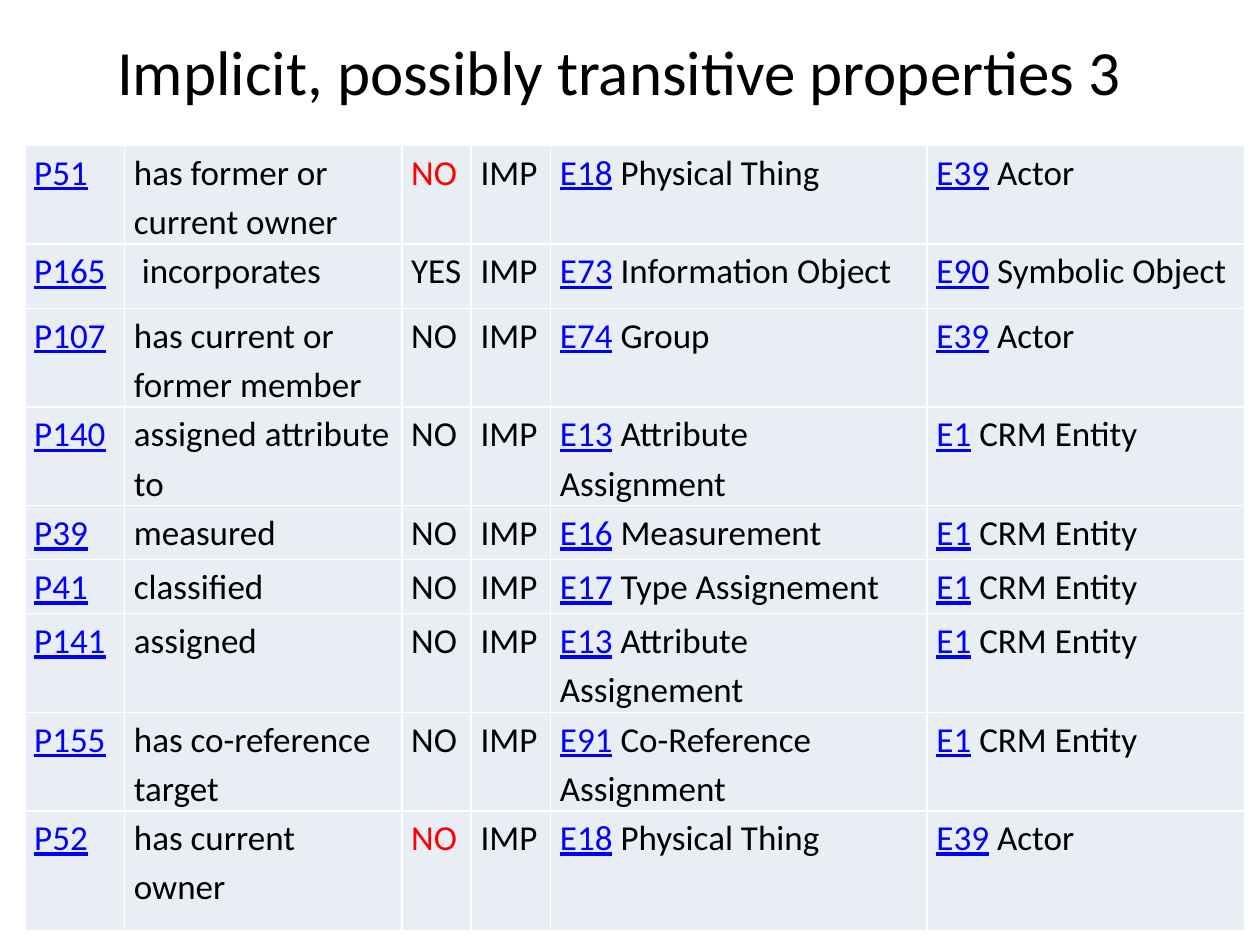
from lxml.etree import SubElement
from pptx import Presentation
from pptx.dml.color import RGBColor
from pptx.enum.text import MSO_AUTO_SIZE, PP_ALIGN
from pptx.oxml.ns import qn
from pptx.util import Cm, Pt

COLORS = {"text": "000000", "link": "0000FF", "alert": "FF0000",
          "cell": "E9EDF4", "border": "FFFFFF"}
COL_WIDTHS = [2.01, 5.59, 1.4, 1.6, 7.59, 6.4]
ROW_HEIGHTS = [1.3, 1.3, 1.24, 1.19, 1.09, 1.09, 1.78, 1.3, 2.41]
PROPERTIES = [
    ("P51", "has former or current owner", "NO", "E18 Physical Thing", "E39 Actor"),
    ("P165", " incorporates", "YES", "E73 Information Object", "E90 Symbolic Object"),
    ("P107", "has current or former member", "NO", "E74 Group", "E39 Actor"),
    ("P140", "assigned attribute to", "NO", "E13 Attribute Assignment", "E1 CRM Entity"),
    ("P39", "measured", "NO", "E16 Measurement", "E1 CRM Entity"),
    ("P41", "classified", "NO", "E17 Type Assignement", "E1 CRM Entity"),
    ("P141", "assigned", "NO", "E13 Attribute Assignement", "E1 CRM Entity"),
    ("P155", "has co-reference target", "NO", "E91 Co-Reference Assignment", "E1 CRM Entity"),
    ("P52", "has current owner", "NO", "E18 Physical Thing", "E39 Actor"),
]
ALERTS = {"P51", "P52"}


def add_text(p, text, size=20, color="text", underline=False):
    """Append a formatted run to a paragraph."""
    r = p.add_run()
    r.text = text
    r.font.name = "Calibri"
    r.font.size = Pt(size)
    r.font.underline = underline
    r.font.color.rgb = RGBColor.from_string(COLORS[color])


def add_class(p, label):
    """Write a class label with its code styled as a link."""
    code, name = label.split(" ", 1)
    add_text(p, code, color="link", underline=True)
    add_text(p, " " + name)


def style_cell(cell):
    """Set margins, borders, fill and line spacing, and return the paragraph."""
    cell.margin_left = cell.margin_right = Cm(0.19)
    cell.margin_top = cell.margin_bottom = 0
    tcPr = cell._tc.get_or_add_tcPr()
    for side in ("a:lnL", "a:lnR", "a:lnT", "a:lnB"):
        ln = SubElement(tcPr, qn(side), w=str(Pt(1)))
        fill = SubElement(ln, qn("a:solidFill"))
        SubElement(fill, qn("a:srgbClr"), val=COLORS["border"])
    cell.fill.solid()
    cell.fill.fore_color.rgb = RGBColor.from_string(COLORS["cell"])
    p = cell.text_frame.paragraphs[0]
    p.line_spacing = 1.15
    return p


def add_title(s, text, left, top, width, height):
    """Place the slide title."""
    tf = s.shapes.add_textbox(Cm(left), Cm(top), Cm(width), Cm(height)).text_frame
    tf.word_wrap = False
    tf.auto_size = MSO_AUTO_SIZE.SHAPE_TO_FIT_TEXT
    add_text(tf.paragraphs[0], text, size=36)


def add_properties(s, left, top):
    """Place the table of properties with its domain and range classes."""
    table = s.shapes.add_table(
        len(PROPERTIES), len(COL_WIDTHS), Cm(left), Cm(top),
        Cm(sum(COL_WIDTHS)), Cm(sum(ROW_HEIGHTS))).table
    table.first_row = table.horz_banding = False
    for column, width in zip(table.columns, COL_WIDTHS):
        column.width = Cm(width)
    for row, height, values in zip(table.rows, ROW_HEIGHTS, PROPERTIES):
        row.height = Cm(height)
        code, name, transitive, domain, target = values
        cells = [style_cell(cell) for cell in row.cells]
        cells[0].alignment = PP_ALIGN.JUSTIFY
        add_text(cells[0], code, color="link", underline=True)
        add_text(cells[1], name)
        add_text(cells[2], transitive, color="alert" if code in ALERTS else "text")
        add_text(cells[3], "IMP")
        add_class(cells[4], domain)
        add_class(cells[5], target)


def main():
    """Build the slide and save it."""
    prs = Presentation()
    prs.slide_width, prs.slide_height = Cm(25.4), Cm(19.05)
    s = prs.slides.add_slide(prs.slide_layouts[6])
    add_properties(s, 0.5, 2.93)
    add_title(s, "Implicit, possibly transitive properties 3", 2.11, 0.53, 20.96, 1.8)
    prs.save("out.pptx")


if __name__ == "__main__":
    main()
